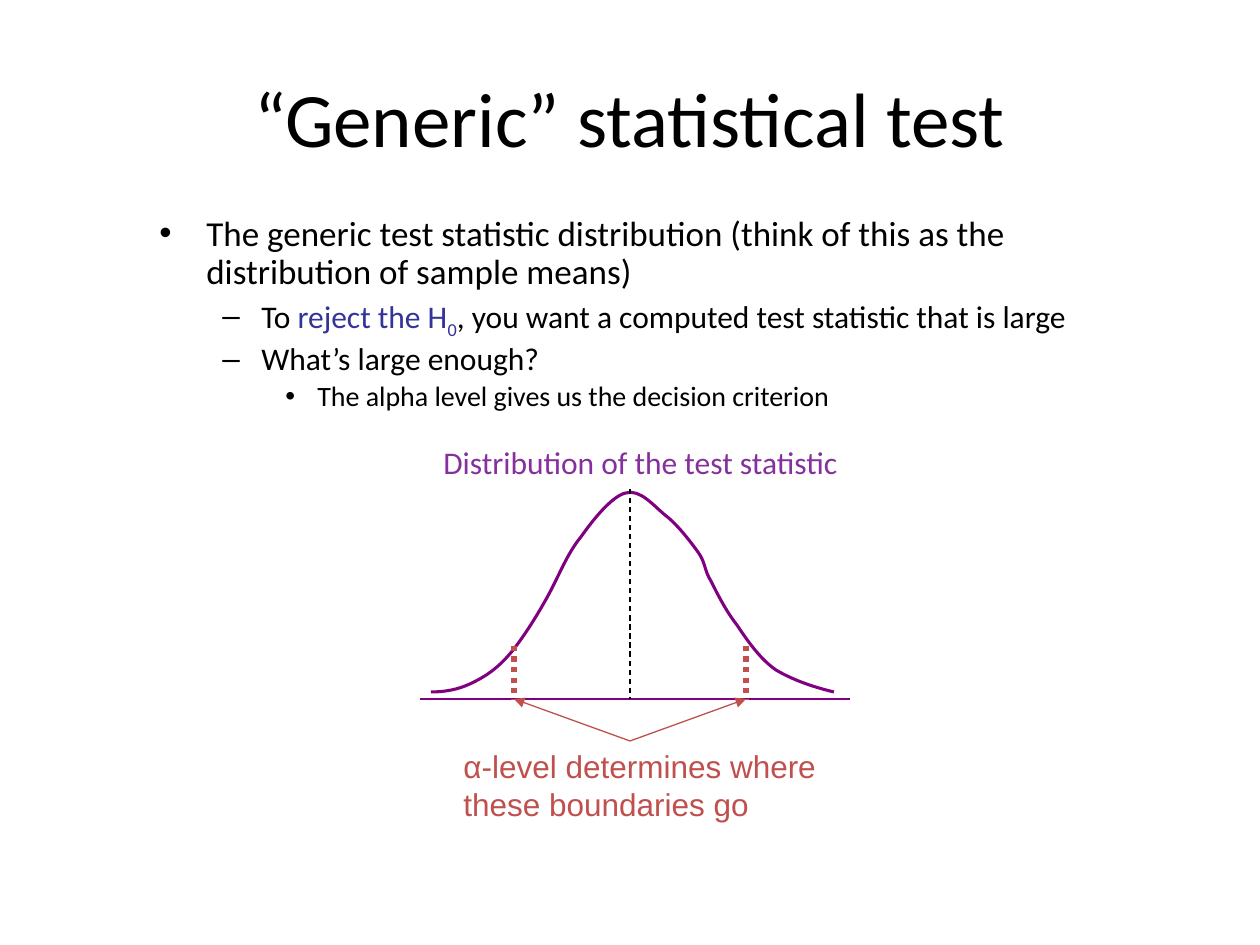
"""Build a slide on the distribution of a generic test statistic."""
from lxml.etree import SubElement
from pptx import Presentation
from pptx.dml.color import RGBColor
from pptx.enum.dml import MSO_LINE
from pptx.enum.shapes import MSO_CONNECTOR
from pptx.enum.text import MSO_ANCHOR, PP_ALIGN
from pptx.oxml.ns import qn
from pptx.util import Pt

PX = 914400 / 126
BLACK = RGBColor(0x00, 0x00, 0x00)
BLUE = RGBColor(0x33, 0x33, 0x99)
PURPLE = RGBColor(0x80, 0x00, 0x80)
VIOLET = RGBColor(0x85, 0x30, 0x9D)
RED = RGBColor(0xC0, 0x50, 0x4D)


def style(r, size, color, name="Calibri"):
    r.font.size = Pt(size)
    r.font.color.rgb = color
    r.font.name = name


def add_line(x1, y1, x2, y2, color, width, dash=None, arrow=False):
    ends = [round(v * PX) for v in (x1, y1, x2, y2)]
    sp = s.shapes.add_connector(MSO_CONNECTOR.STRAIGHT, *ends)
    sp.line.color.rgb = color
    sp.line.width = Pt(width)
    if dash:
        sp.line.dash_style = dash
    if arrow:
        SubElement(sp.line._get_or_add_ln(), qn("a:tailEnd"), type="triangle")
    SubElement(sp._element.spPr, qn("a:effectLst"))


prs = Presentation()
prs.slide_width, prs.slide_height = round(1260 * PX), round(945 * PX)
s = prs.slides.add_slide(prs.slide_layouts[5])

title = s.shapes.title
title.left, title.top, title.width, title.height = [round(v * PX) for v in (63, 38, 1134, 157)]
tf = title.text_frame
tf.text = "“Generic” statistical test"
tf.vertical_anchor = MSO_ANCHOR.MIDDLE
tf.paragraphs[0].alignment = PP_ALIGN.CENTER
style(tf.paragraphs[0].runs[0], 44, BLACK)

LEVELS = [(20, 47, 47, "•"), (18, 102, 39, "–"), (16, 158, 32, "•")]
BULLETS = [
    (0, [("The generic test statistic distribution (think of this as the distribution of sample means)", BLACK, 0)]),
    (1, [("To ", BLACK, 0), ("reject the H", BLUE, 0), ("0", BLUE, -25000),
         (", you want a computed test statistic that is large", BLACK, 0)]),
    (1, [("What’s large enough?", BLACK, 0)]),
    (2, [("The alpha level gives us the decision criterion", BLACK, 0)]),
]
body = s.shapes.add_textbox(*[round(v * PX) for v in (147, 210, 1040, 252)])
tf = body.text_frame
tf.word_wrap = True
for i, (level, parts) in enumerate(BULLETS):
    size, margin, hang, mark = LEVELS[level]
    p = tf.add_paragraph() if i else tf.paragraphs[0]
    p.level = level
    p.line_spacing = 0.9
    p.space_before = Pt(size * 0.2)
    pPr = p._p.get_or_add_pPr()
    pPr.set("marL", str(round(margin * PX)))
    pPr.set("indent", str(round(-hang * PX)))
    SubElement(pPr, qn("a:buFont"), typeface="Arial")
    SubElement(pPr, qn("a:buChar"), char=mark)
    for text, color, baseline in parts:
        r = p.add_run()
        r.text = text
        style(r, size, color)
        if baseline:
            r.font._element.set("baseline", str(baseline))

add_line(420, 699, 850, 699, PURPLE, 0.75)

CURVE = [
    (431, 692),
    (444, 692), (457, 690), (470, 684),
    (483, 678), (496, 670), (509, 655),
    (522, 640), (537, 616), (548, 596),
    (559, 576), (567, 554), (581, 537),
    (593, 520), (612, 496), (626, 493),
    (640, 489), (653, 505), (665, 515),
    (677, 524), (690, 541), (698, 552),
    (706, 563), (704, 570), (711, 581),
    (717, 593), (726, 611), (737, 625),
    (747, 640), (760, 659), (776, 670),
    (793, 680), (813, 687), (834, 692),
]
builder = s.shapes.build_freeform(*CURVE[0], scale=PX)
builder.add_line_segments(CURVE[1:], close=False)
bell = builder.convert_to_shape()
bell.shadow.inherit = False
bell.fill.background()
bell.line.color.rgb = PURPLE
bell.line.width = Pt(1.75)
outline = next(bell._element.iter(qn("a:path")))
segments = outline.findall(qn("a:lnTo"))
for i in range(0, len(segments), 3):
    bezier = SubElement(outline, qn("a:cubicBezTo"))
    for segment in segments[i:i + 3]:
        bezier.append(segment[0])
        outline.remove(segment)

add_line(630, 489, 630, 699, BLACK, 0.75, MSO_LINE.DASH)
for x in (746, 514):
    add_line(x, 646, x, 699, RED, 3, MSO_LINE.ROUND_DOT)
    add_line(630, 741, x, 699, RED, 0.75, arrow=True)

LABELS = [
    ("Distribution of the test statistic", (431, 437, 451, 50), VIOLET, "Calibri"),
    ("α-level determines where these boundaries go", (451, 741, 431, 88), RED, "Arial"),
]
for text, box, color, name in LABELS:
    sp = s.shapes.add_textbox(*[round(v * PX) for v in box])
    tf = sp.text_frame
    tf.word_wrap = True
    tf.text = text
    style(tf.paragraphs[0].runs[0], 18, color, name)

prs.save("out.pptx")
